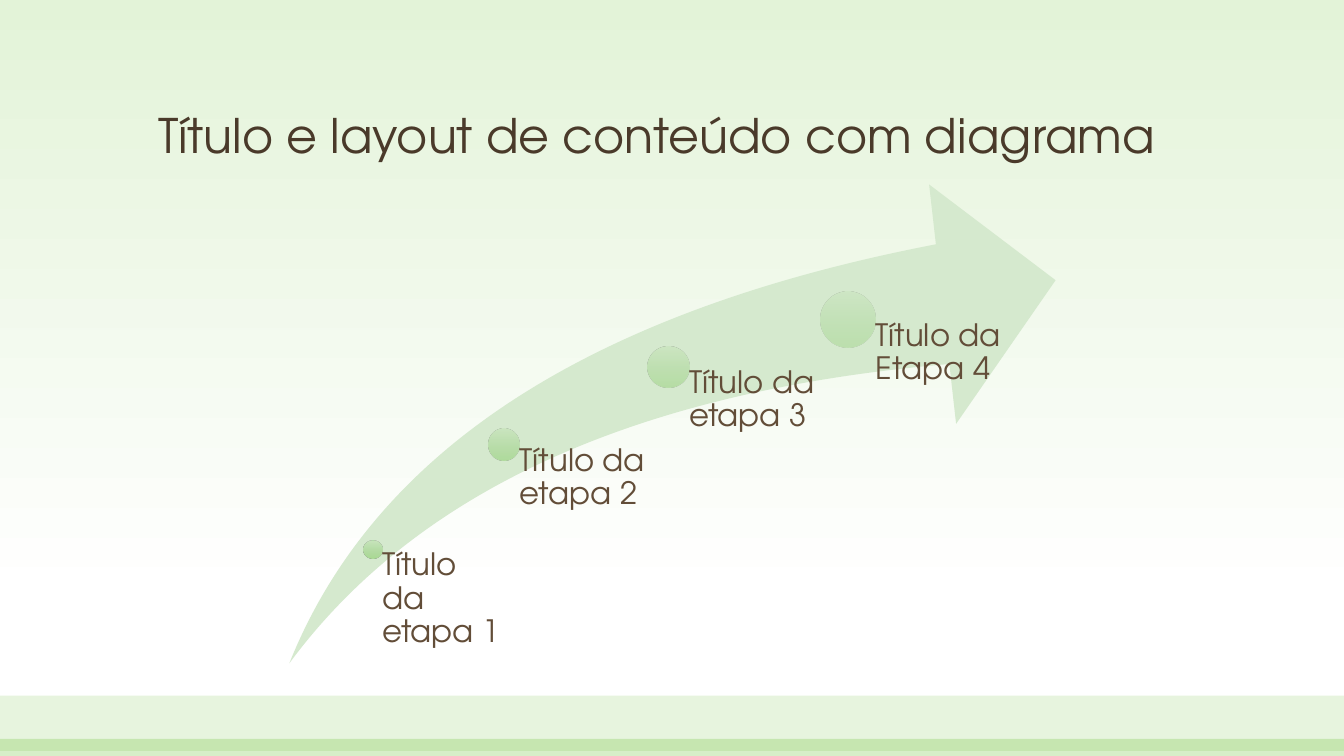
import pptx
import pptx.util
from lxml import etree
from pptx.dml.color import RGBColor
from pptx.enum.shapes import MSO_SHAPE
from pptx.enum.text import MSO_ANCHOR
from pptx.oxml.ns import qn
from pptx.util import Inches

FONT = "TeX Gyre Adventor"
TITLE_BROWN = RGBColor(0x4A, 0x3A, 0x2A)
LABEL_BROWN = RGBColor(0x62, 0x4D, 0x38)
BAND_GREEN = RGBColor(0x72, 0xC2, 0x3C)
ARROW_GREEN = RGBColor(0xD5, 0xE9, 0xCE)
SKY_GREEN = RGBColor(0xE3, 0xF3, 0xD8)
WHITE = RGBColor(0xFF, 0xFF, 0xFF)
DOT_STOPS = [(0, RGBColor(0xC8, 0xE5, 0xBC)),
             (50, RGBColor(0xB3, 0xDB, 0xA2)),
             (100, RGBColor(0xA4, 0xD7, 0x8D))]


def fill_gradient(fill, owner, stops, opacity=100):
    """Fill from top to bottom with (percent, colour) stops."""
    fill.gradient()
    fill.gradient_angle = 270
    stop_list = owner.find(".//" + qn("a:gsLst"))
    for default_stop in list(stop_list):
        stop_list.remove(default_stop)
    for percent, color in stops:
        stop = etree.SubElement(stop_list, qn("a:gs"), pos=str(percent * 1000))
        rgb = etree.SubElement(stop, qn("a:srgbClr"), val=str(color))
        etree.SubElement(rgb, qn("a:alpha"), val=str(opacity * 1000))


def add_text(left, top, width, height, text, size, color, inset, anchor):
    """Add a wrapped text box; inset gives left, top, right and bottom."""
    frame = slide.shapes.add_textbox(
        Inches(left), Inches(top), Inches(width), Inches(height)).text_frame
    frame.word_wrap = True
    frame.vertical_anchor = anchor
    (frame.margin_left, frame.margin_top,
     frame.margin_right, frame.margin_bottom) = map(Inches, inset)
    paragraph = frame.paragraphs[0]
    paragraph.line_spacing = 0.9
    run = paragraph.add_run()
    run.text = text
    run.font.name = FONT
    run.font.size = pptx.util.Pt(size)
    run.font.color.rgb = color


presentation = pptx.Presentation()
presentation.slide_width = Inches(13.33)
presentation.slide_height = Inches(7.5)
slide = presentation.slides.add_slide(presentation.slide_layouts[6])

# Background
fill_gradient(slide.background.fill, slide.element, [(0, SKY_GREEN), (79, WHITE)])

# Translucent bands along the bottom
for top, height, opacity in [(6.9, 0.55, 17), (7.33, 0.17, 28)]:
    band = slide.shapes.add_shape(
        MSO_SHAPE.RECTANGLE, 0, Inches(top), Inches(13.33), Inches(height))
    band.shadow.inherit = False
    band.line.fill.background()
    band.fill.solid()
    band.fill.fore_color.rgb = BAND_GREEN
    band_rgb = band.element.spPr.find(".//" + qn("a:srgbClr"))
    etree.SubElement(band_rgb, qn("a:alpha"), val=str(opacity * 1000))

# Title
add_text(1.47, 0.48, 10.4, 1.19, "Título e layout de conteúdo com diagrama",
         34, TITLE_BROWN, (0.1, 0.05, 0.1, 0.05), MSO_ANCHOR.BOTTOM)

# Rising arrow
ARROW_TOP, ARROW_HEIGHT = 1.83, 4.75
arrow = slide.shapes.add_shape(MSO_SHAPE.SWOOSH_ARROW, Inches(2.87),
                               Inches(ARROW_TOP), Inches(7.6), Inches(ARROW_HEIGHT))
arrow.shadow.inherit = False
arrow.adjustments[0] = 0.25
arrow.adjustments[1] = 0.25
arrow.line.fill.background()
arrow.fill.solid()
arrow.fill.fore_color.rgb = ARROW_GREEN

# Steps: dot centre, diameter and opacity, then label width and text
steps = [
    (3.7, 5.45, 0.18, 90, 1.3, "Título da etapa 1"),
    (5.0, 4.41, 0.31, 77, 1.6, "Título da etapa 2"),
    (6.63, 3.64, 0.41, 63, 1.6, "Título da etapa 3"),
    (8.41, 3.17, 0.55, 50, 1.6, "Título da Etapa 4"),
]
for x, y, diameter, opacity, label_width, label in steps:
    radius = diameter / 2
    dot = slide.shapes.add_shape(
        MSO_SHAPE.OVAL, Inches(x - radius), Inches(y - radius),
        Inches(diameter), Inches(diameter))
    dot.shadow.inherit = False
    dot.line.fill.background()
    fill_gradient(dot.fill, dot.element, DOT_STOPS, opacity)
    # The label starts at the dot centre and reaches the foot of the arrow
    add_text(x, y, label_width, ARROW_TOP + ARROW_HEIGHT - y, label,
             22, LABEL_BROWN, (radius, 0, 0, 0), MSO_ANCHOR.TOP)

presentation.save("out.pptx")
